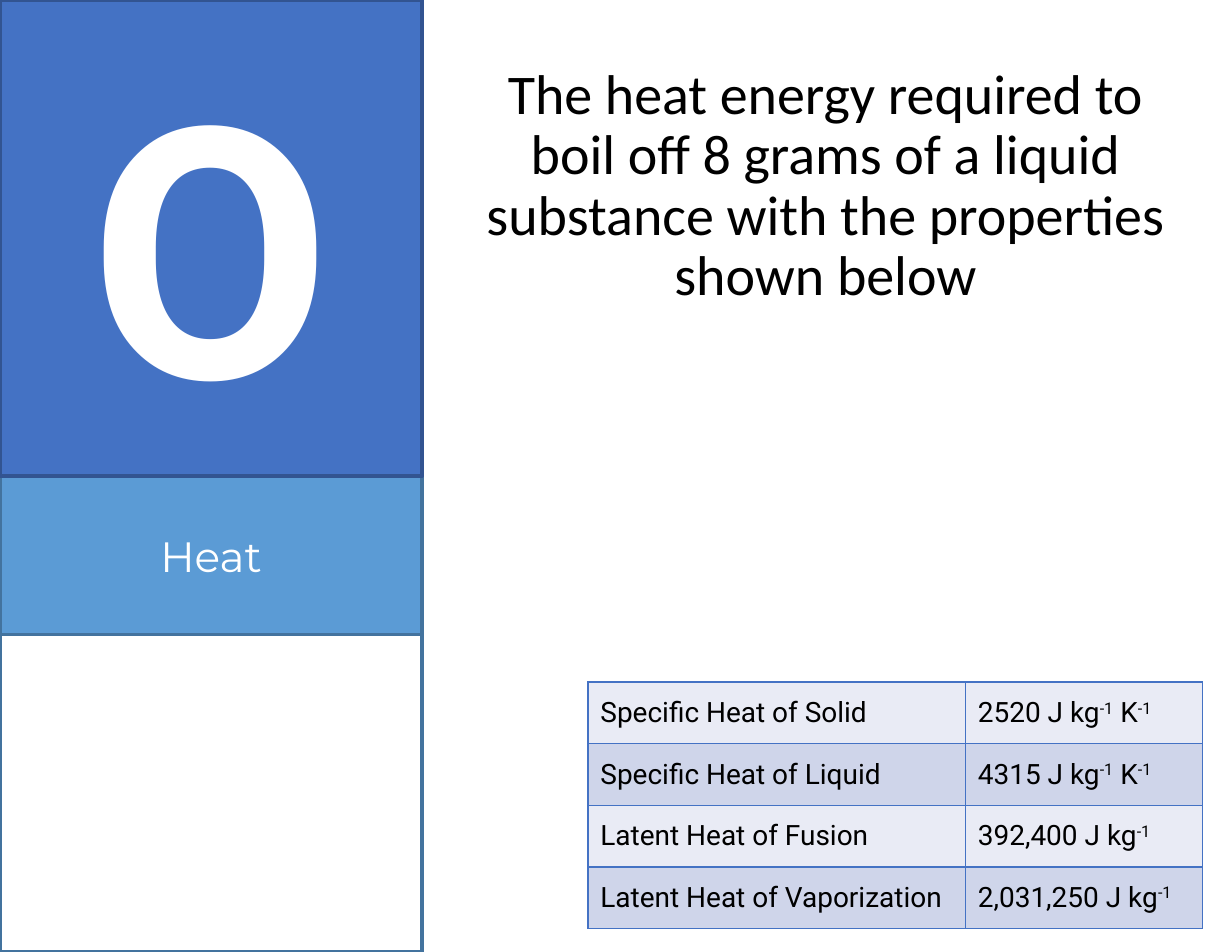
"""Build the heat question card with its table of substance properties."""
from lxml import etree
from pptx import Presentation
from pptx.dml.color import RGBColor
from pptx.enum import shapes, text
from pptx.oxml import ns
from pptx.util import Pt

BLACK = RGBColor(0x00, 0x00, 0x00)
WHITE = RGBColor(0xFF, 0xFF, 0xFF)
BLUE = RGBColor(0x44, 0x72, 0xC4)
DARK_BLUE = RGBColor(0x32, 0x54, 0x91)
SKY = RGBColor(0x5B, 0x9B, 0xD5)
DARK_SKY = RGBColor(0x43, 0x73, 0x9E)
BANDS = [RGBColor(0xE9, 0xEB, 0xF5), RGBColor(0xCF, 0xD5, 0xEA)]


def add_text(paragraph, content, font="Roboto", size=18, color=BLACK, bold=False, baseline=0):
    run = paragraph.add_run()
    run.text = content
    run.font.name = font
    run.font.size = Pt(size)
    run.font.color.rgb = color
    run.font.bold = bold
    if baseline:
        run.font._element.set("baseline", str(baseline))


def add_borders(cell, color, width):
    properties = cell._tc.get_or_add_tcPr()
    for position, side in enumerate(("lnL", "lnR", "lnT", "lnB")):
        line = etree.Element(ns.qn(f"a:{side}"), w=str(Pt(width)))
        fill = etree.SubElement(line, ns.qn("a:solidFill"))
        etree.SubElement(fill, ns.qn("a:srgbClr"), val=str(color))
        properties.insert(position, line)


presentation = Presentation()
presentation.slide_width = Pt(792)
presentation.slide_height = Pt(612)
slide = presentation.slides.add_slide(presentation.slide_layouts[5])

title = slide.shapes.title
title.left, title.top, title.width, title.height = Pt(296.64), Pt(38.88), Pt(468), Pt(181.44)
title.text_frame.word_wrap = True
title.text_frame.auto_size = text.MSO_AUTO_SIZE.NONE
title.text_frame.vertical_anchor = text.MSO_ANCHOR.TOP
paragraph = title.text_frame.paragraphs[0]
paragraph.alignment = text.PP_ALIGN.CENTER
paragraph.line_spacing = 0.9
question = "The heat energy required to boil off 8 grams of a liquid substance with the properties shown below"
add_text(paragraph, question, font="Calibri", size=36)

rows = [
    ("Specific Heat of Solid", ["2520 J kg", "-1", " K", "-1"]),
    ("Specific Heat of Liquid", ["4315 J kg", "-1", " K", "-1"]),
    ("Latent Heat of Fusion", ["392,400 J kg", "-1"]),
    ("Latent Heat of Vaporization", ["2,031,250 J kg", "-1"]),
]
row_height = 39.6
column_widths = [242.64, 152.64]
frame = slide.shapes.add_table(
    len(rows), len(column_widths), Pt(378), Pt(438.48),
    Pt(sum(column_widths)), Pt(row_height * len(rows)))
table = frame.table
table.first_row = False
for column, width in zip(table.columns, column_widths):
    column.width = Pt(width)
for index, (label, value) in enumerate(rows):
    table.rows[index].height = Pt(row_height)
    for cell, parts in zip(table.rows[index].cells, ([label], value)):
        cell.fill.solid()
        cell.fill.fore_color.rgb = BANDS[index % 2]
        cell.vertical_anchor = text.MSO_ANCHOR.MIDDLE
        cell.margin_left = cell.margin_right = Pt(8)
        cell.margin_top = cell.margin_bottom = Pt(4)
        add_borders(cell, BLUE, 1)
        for part in parts:
            add_text(cell.text_frame.paragraphs[0], part, baseline=30000 if part == "-1" else 0)

panels = [
    (306, 102, SKY, DARK_SKY, "Heat", {"font": "Montserrat", "size": 27.2}),
    (408, 204, WHITE, DARK_SKY, "", {}),
    (0, 306, BLUE, DARK_BLUE, "O", {"size": 225.5, "bold": True}),
]
for top, height, fill, outline, content, style in panels:
    panel = slide.shapes.add_shape(shapes.MSO_SHAPE.RECTANGLE, 0, Pt(top), Pt(271.44), Pt(height))
    panel.shadow.inherit = False
    panel.fill.solid()
    panel.fill.fore_color.rgb = fill
    panel.line.color.rgb = outline
    panel.line.width = Pt(2.25)
    if content:
        panel.text_frame.vertical_anchor = text.MSO_ANCHOR.MIDDLE
        paragraph = panel.text_frame.paragraphs[0]
        paragraph.alignment = text.PP_ALIGN.CENTER
        add_text(paragraph, content, color=WHITE, **style)

presentation.save("out.pptx")
